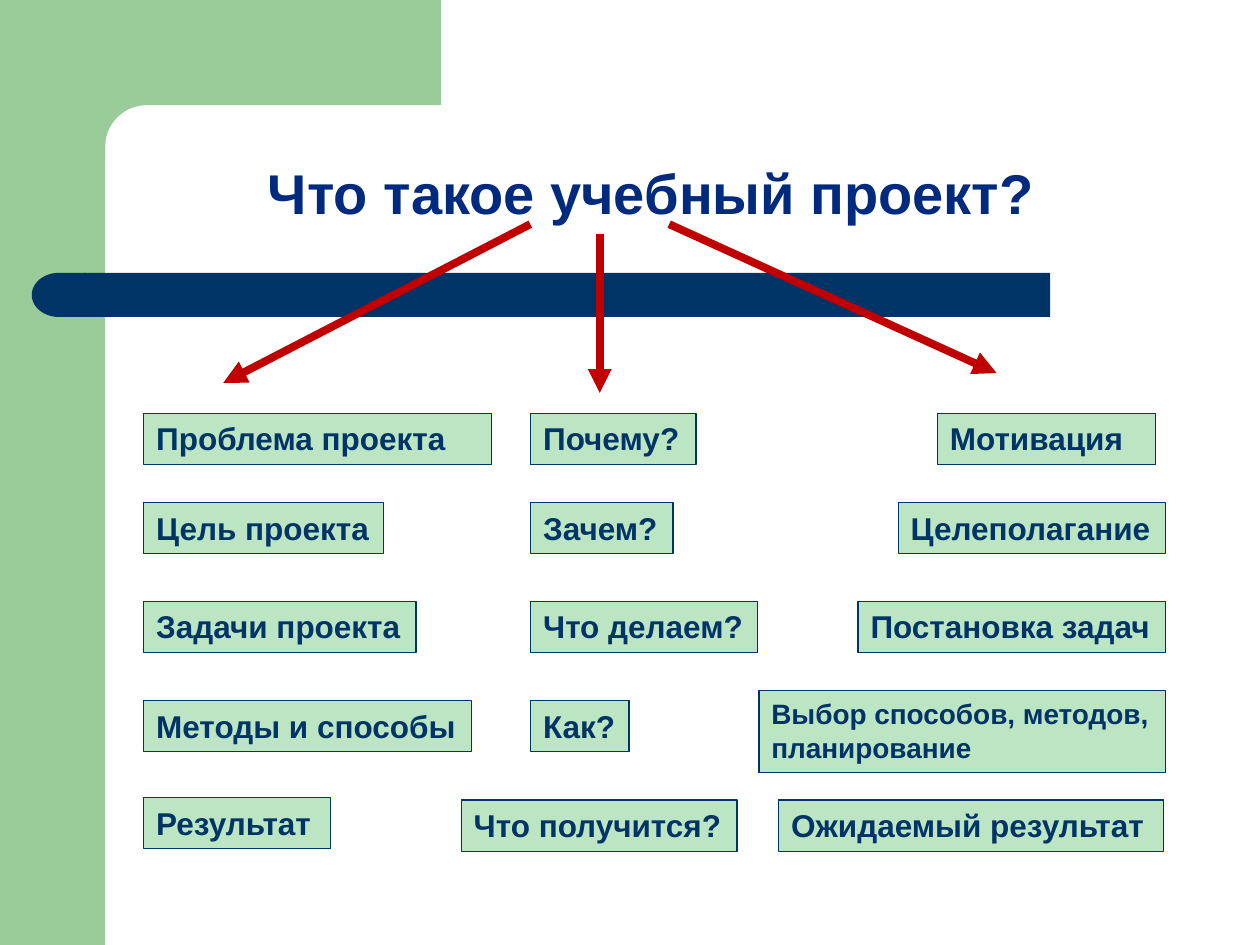
from math import cos, pi, sin

from lxml.etree import SubElement
from pptx import Presentation
from pptx.dml.color import RGBColor
from pptx.enum.shapes import MSO_CONNECTOR as Connector, MSO_SHAPE as Shape
from pptx.enum.text import MSO_ANCHOR as Anchor, MSO_AUTO_SIZE as AutoSize, PP_ALIGN as Align
from pptx.oxml.ns import qn
from pptx.util import Cm, Pt

GREEN = RGBColor(0x99, 0xCC, 0x99)
MINT = RGBColor(0xBC, 0xE6, 0xC3)
NAVY = RGBColor(0x00, 0x33, 0x66)
TITLE_BLUE = RGBColor(0x00, 0x2A, 0x7E)
RED = RGBColor(0xC0, 0x00, 0x00)

LEFT, MIDDLE = 2.9, 10.7
ROWS = [
    (8.33, [("Проблема проекта", LEFT, 7.01, True), ("Почему?", MIDDLE, 3.33, False),
            ("Мотивация", 18.9, 4.39, True)]),
    (10.13, [("Цель проекта", LEFT, 4.83, False), ("Зачем?", MIDDLE, 2.87, False),
             ("Целеполагание", 18.11, 5.38, False)]),
    (12.12, [("Задачи проекта", LEFT, 5.49, False), ("Что делаем?", MIDDLE, 4.57, False),
             ("Постановка задач", 17.3, 6.2, False)]),
    (14.12, [("Методы и способы", LEFT, 6.6, False), ("Как?", MIDDLE, 1.98, False)]),
    (16.08, [("Результат", LEFT, 3.76, False)]),
    (16.13, [("Что получится?", 9.3, 5.56, False), ("Ожидаемый результат", 15.7, 7.75, False)]),
]
ARROWS = [
    (10.69, 4.52, 4.5, 7.72),
    (12.09, 4.72, 12.09, 7.92),
    (13.49, 4.52, 20.09, 7.52),
]


class Painter:
    """Draws styled elements on the current slide."""

    font_name = "Arial"

    def __init__(self, page):
        self.page = page

    def style_text(self, frame, size, color):
        for para in frame.paragraphs:
            for span in para.runs:
                span.font.name = self.font_name
                span.font.size = Pt(size)
                span.font.bold = True
                span.font.color.rgb = color

    def paint(self, shape, color):
        shape.fill.solid()
        shape.fill.fore_color.rgb = color
        shape.line.fill.background()
        shape.shadow.inherit = False

    def block(self, kind, left, top, width, height, color):
        shape = self.page.shapes.add_shape(kind, Cm(left), Cm(top), Cm(width), Cm(height))
        self.paint(shape, color)
        return shape

    def corner(self, left, right, bottom, inner, radius, edge):
        center_x, center_y = inner + radius, edge + radius
        angles = [pi / 2 * step / 16 for step in range(17)]
        arc = [(center_x - radius * sin(a), center_y - radius * cos(a)) for a in angles]
        points = [(right, edge), *arc, (inner, bottom), (left, bottom), (left, 0)]
        builder = self.page.shapes.build_freeform(Cm(right), 0)
        builder.add_line_segments([(Cm(x), Cm(y)) for x, y in points], close=True)
        self.paint(builder.convert_to_shape(), color=GREEN)

    def title(self, text, left, top, width, height):
        title = self.page.shapes.title
        title.left, title.top, title.width, title.height = Cm(left), Cm(top), Cm(width), Cm(height)
        frame = title.text_frame
        frame.text = text
        frame.word_wrap = True
        frame.vertical_anchor = Anchor.BOTTOM
        frame.paragraphs[0].alignment = Align.CENTER
        frame.paragraphs[0].line_spacing = 0.9
        self.style_text(frame, 32, TITLE_BLUE)

    def label(self, text, left, top, width, wrap=False, height=1.03, size=18):
        box = self.page.shapes.add_textbox(Cm(left), Cm(top), Cm(width), Cm(height))
        box.fill.solid()
        box.fill.fore_color.rgb = MINT
        box.line.color.rgb = NAVY
        box.line.width = Pt(0.75)
        frame = box.text_frame
        frame.text = text
        frame.word_wrap = wrap
        frame.auto_size = AutoSize.SHAPE_TO_FIT_TEXT
        self.style_text(frame, size, NAVY)

    def arrow(self, *ends):
        arrow = self.page.shapes.add_connector(Connector.STRAIGHT, *map(Cm, ends))
        arrow.line.color.rgb = RED
        arrow.line.width = Pt(4.5)
        SubElement(arrow.line._get_or_add_ln(), qn("a:tailEnd"), type="triangle")
        SubElement(arrow._element.spPr, qn("a:effectLst"))


def main():
    deck = Presentation()
    deck.slide_width, deck.slide_height = Cm(25.4), Cm(19.05)
    painter = Painter(deck.slides.add_slide(deck.slide_layouts[5]))

    painter.block(Shape.RECTANGLE, 0, 0, 2.12, 19.05, GREEN)
    painter.corner(left=1.27, right=8.89, bottom=3.25, inner=2.12, radius=0.84, edge=2.12)
    painter.block(Shape.RECTANGLE, 1.7, 5.5, 19.47, 0.89, NAVY)
    cap = painter.block(Shape.FLOWCHART_DELAY, 0.64, 5.5, 1.09, 0.89, NAVY)
    cap.rotation = 180

    painter.title("Что такое учебный проект?", 2.12, 1.52, 22.02, 3.18)
    for top, labels in ROWS:
        for text, left, width, wrap in labels:
            painter.label(text, left, top, width, wrap)
    painter.label("Выбор способов, методов, планирование", 15.3, 13.92, 8.2,
                  wrap=True, height=1.65, size=16)
    for ends in ARROWS:
        painter.arrow(*ends)

    deck.save("out.pptx")


if __name__ == "__main__":
    main()
